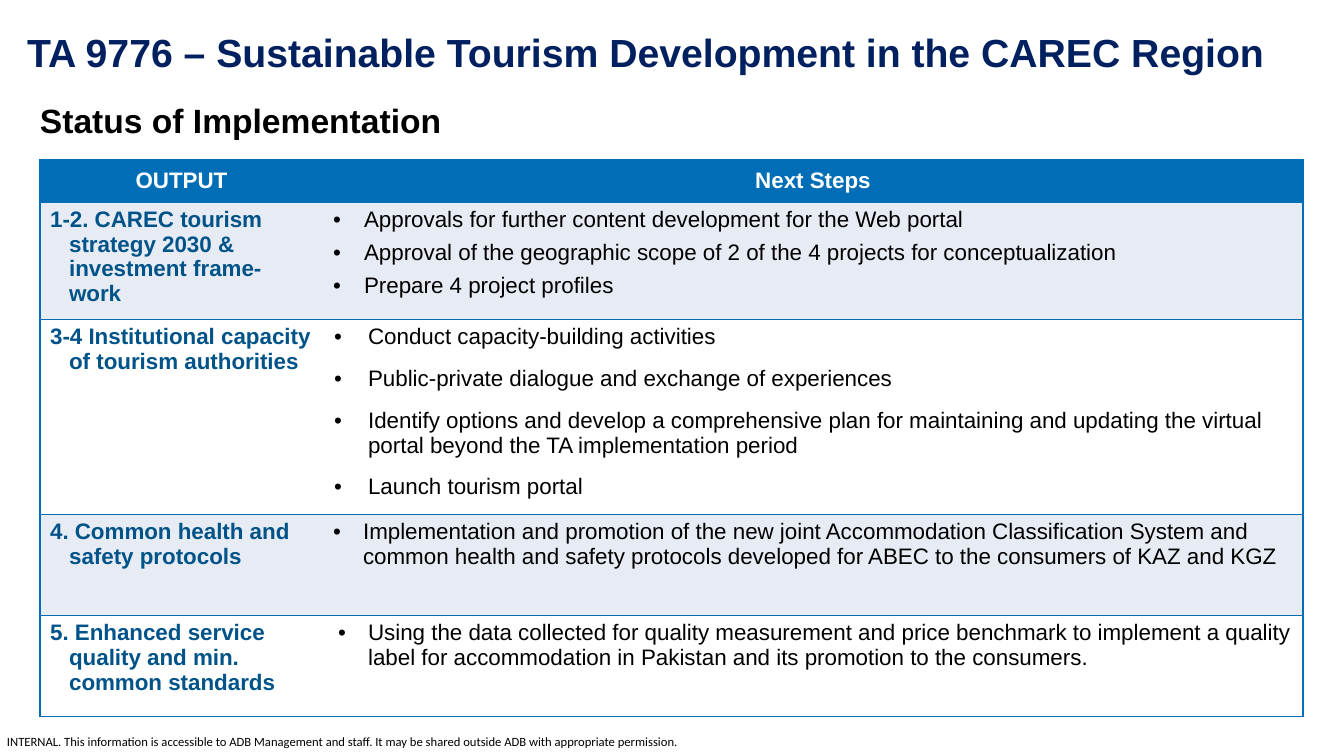
from lxml import etree
from pptx import Presentation
from pptx import util as u
from pptx.dml.color import RGBColor
from pptx.enum import text
from pptx.oxml.ns import qn

TEXTS = [
    ("INTERNAL. This information is accessible to ADB Management and staff. "
     "It may be shared outside ADB with appropriate permission.",
     (7, 734, 675, 15), 0, 9, "Calibri", "000000", False, "LEFT"),
    ("TA 9776 – Sustainable Tourism Development in the CAREC Region",
     (3, 23, 1285, 57), 10, 28, "Arial", "002060", True, "CENTER"),
    ("Status of Implementation",
     (30, 95, 918, 50), 10, 24, "Arial", "000000", True, "LEFT"),
]
HEADERS = ["OUTPUT", "Next Steps"]
ROWS = [
    ("1-2. CAREC tourism strategy 2030 & investment frame-work",
     ["Approvals for further content development for the Web portal",
      "Approval of the geographic scope of 2 of the 4 projects for conceptualization",
      "Prepare 4 project profiles"], 31, 31, 6),
    ("3-4 Institutional capacity of tourism authorities",
     ["Conduct capacity-building activities",
      "Public-private dialogue and exchange of experiences",
      "Identify options and develop a comprehensive plan for maintaining and updating "
      "the virtual portal beyond the TA implementation period",
      "Launch tourism portal"], 35, 34, 12),
    ("4. Common health and safety protocols",
     ["Implementation and promotion of the new joint Accommodation Classification System "
      "and common health and safety protocols developed for ABEC to the consumers of "
      "KAZ and KGZ"], 30, 30, 12),
    ("5. Enhanced service quality and min. common standards",
     ["Using the data collected for quality measurement and price benchmark to implement "
      "a quality label for accommodation in Pakistan and its promotion to the consumers."],
     35, 30, 12),
]
COL_WIDTHS = [283, 980]
ROW_HEIGHTS = [42, 117, 195, 101, 101]
BLUE, DARK_BLUE, BAND, WHITE, BLACK = "006EB7", "005389", "E7EBF3", "FFFFFF", "000000"


def px(n):
    return u.Emu(round(n * 914400 / 100.8))


def rgb(color):
    return RGBColor.from_string(color)


def style(p, size, name, color, bold):
    for r in p.runs:
        r.font.size = u.Pt(size)
        r.font.name = name
        r.font.bold = bold
        r.font.color.rgb = rgb(color)


def indent(p, left, hanging, bullet=False):
    pPr = p._p.get_or_add_pPr()
    pPr.set("marL", str(px(left)))
    pPr.set("indent", str(-px(hanging)))
    if bullet:
        etree.SubElement(pPr, qn("a:buFont")).set("typeface", "Arial")
        etree.SubElement(pPr, qn("a:buChar")).set("char", "•")


def border(cell, sides):
    tcPr = cell._tc.get_or_add_tcPr()
    for i, side in enumerate("LRTB"):
        ln = etree.Element(qn("a:ln" + side))
        if side in sides:
            ln.set("w", str(u.Pt(1)))
            fill = etree.SubElement(ln, qn("a:solidFill"))
            etree.SubElement(fill, qn("a:srgbClr")).set("val", BLUE)
        else:
            etree.SubElement(ln, qn("a:noFill"))
        tcPr.insert(i, ln)


def add_text(s, words, box, inset, size, name, color, bold, align):
    tf = s.shapes.add_textbox(*map(px, box)).text_frame
    tf.word_wrap = True
    tf.margin_left = tf.margin_right = px(inset)
    tf.margin_top = tf.margin_bottom = px(inset / 2)
    tf.text = words
    p = tf.paragraphs[0]
    p.alignment = text.PP_ALIGN[align]
    style(p, size, name, color, bold)


def add_status_table(s):
    frame = s.shapes.add_table(len(ROW_HEIGHTS), len(COL_WIDTHS), px(40), px(160),
                               px(sum(COL_WIDTHS)), px(sum(ROW_HEIGHTS)))
    table = frame.table
    for column, width in zip(table.columns, COL_WIDTHS):
        column.width = px(width)
    for row, height in zip(table.rows, ROW_HEIGHTS):
        row.height = px(height)
    for i, row in enumerate(table.rows):
        for cell, sides in zip(row.cells, ("LTB", "RTB")):
            cell.fill.solid()
            cell.fill.fore_color.rgb = rgb(BLUE if i == 0 else BAND if i % 2 else WHITE)
            border(cell, sides)
    for cell, header in zip(table.rows[0].cells, HEADERS):
        cell.text = header
        cell.vertical_anchor = text.MSO_ANCHOR.MIDDLE
        p = cell.text_frame.paragraphs[0]
        p.alignment = text.PP_ALIGN.CENTER
        style(p, 16, "Arial", WHITE, True)
    for i, (output, steps, left, hanging, after) in enumerate(ROWS, 1):
        cell = table.cell(i, 0)
        cell.text = output
        p = cell.text_frame.paragraphs[0]
        indent(p, 19, 19)
        style(p, 16, "Arial", DARK_BLUE, True)
        tf = table.cell(i, 1).text_frame
        tf.text = "\n".join(steps)
        for p in tf.paragraphs:
            indent(p, left, hanging, True)
            p.space_after = u.Pt(after)
            style(p, 16, "Arial", BLACK, False)


def main():
    prs = Presentation()
    prs.slide_width, prs.slide_height = px(1344), px(756)
    s = prs.slides.add_slide(prs.slide_layouts[6])
    for item in TEXTS:
        add_text(s, *item)
    add_status_table(s)
    prs.save("out.pptx")


if __name__ == "__main__":
    main()
